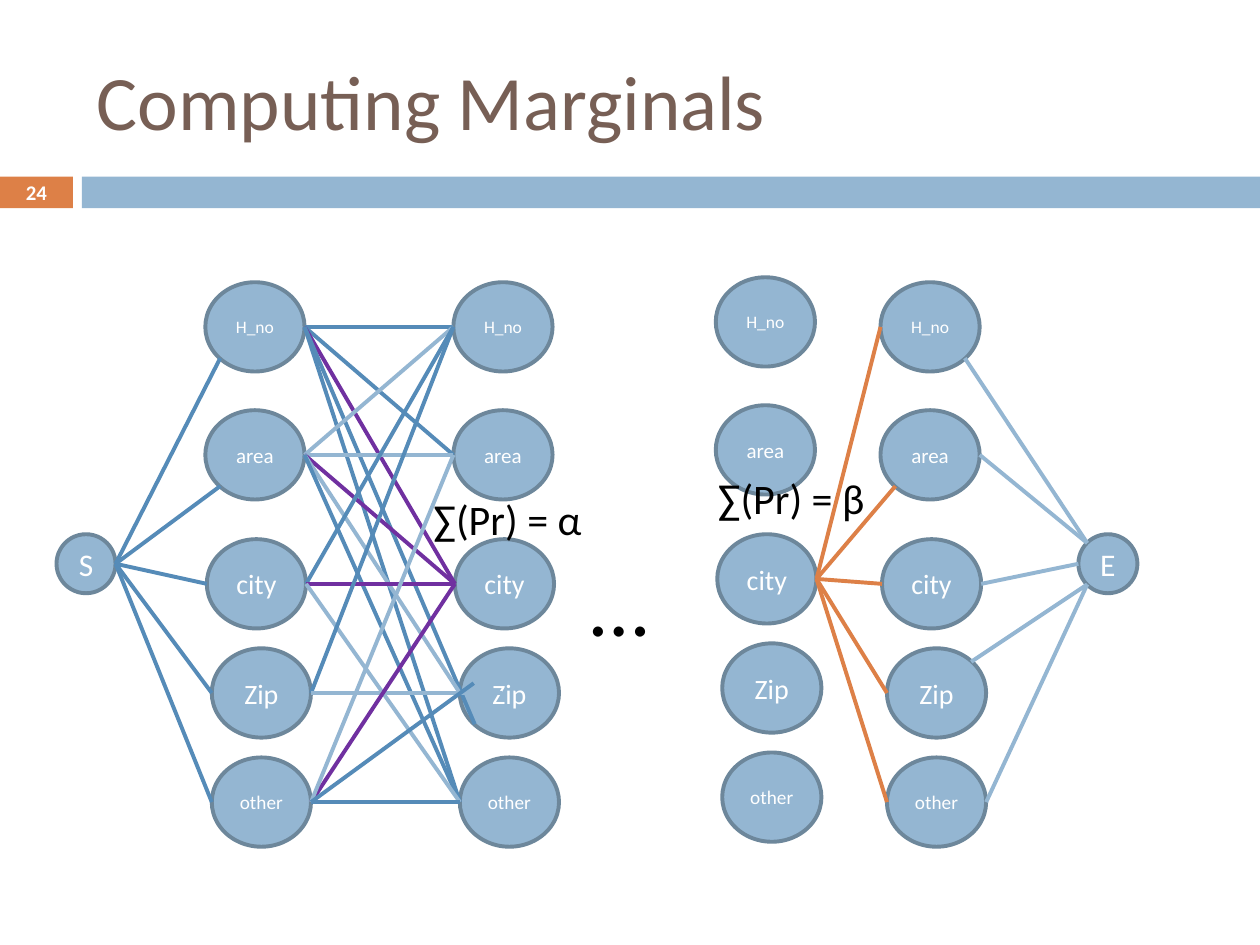
from collections import namedtuple

from lxml import etree
from pptx import Presentation
from pptx.dml.color import RGBColor
from pptx.enum.shapes import MSO_CONNECTOR, MSO_SHAPE
from pptx.enum.text import MSO_ANCHOR, MSO_AUTO_SIZE, PP_ALIGN
from pptx.oxml.ns import qn
from pptx.util import Cm, Pt

OVAL, RECTANGLE = MSO_SHAPE.OVAL, MSO_SHAPE.RECTANGLE
STRAIGHT = MSO_CONNECTOR.STRAIGHT
LEFT, CENTER = PP_ALIGN.LEFT, PP_ALIGN.CENTER
TOP, MIDDLE = MSO_ANCHOR.TOP, MSO_ANCHOR.MIDDLE
NO_AUTOFIT = MSO_AUTO_SIZE.NONE

BROWN = RGBColor(0x77, 0x5F, 0x55)
ORANGE = RGBColor(0xDD, 0x80, 0x47)
LIGHT_BLUE = RGBColor(0x94, 0xB6, 0xD2)
BLUE = RGBColor(0x55, 0x8B, 0xB8)
SLATE = RGBColor(0x6D, 0x87, 0x9B)
PURPLE = RGBColor(0x70, 0x30, 0xA0)
WHITE = RGBColor(0xFF, 0xFF, 0xFF)
BLACK = RGBColor(0, 0, 0)

FONT = "Calibri"
LINE_WIDTH = Pt(2.25)

# All lengths are in centimetres.
Box = namedtuple("Box", "left top width height")
State = namedtuple("State", "label size dx dy")

STATES = [
    State("H_no", 10, 0, 0),
    State("area", 12, 0, 2.58),
    State("city", 16, 0.03, 5.18),
    State("Zip", 16, 0.13, 7.38),
    State("other", 11, 0.13, 9.58),
]
STATE_WIDTH, STATE_HEIGHT = 2.0, 1.8
TERMINAL_SIZE = 1.19

# Where an edge meets a node, as fractions of the node's width and height.
ANCHORS = {
    "left": (0, 0.5),
    "right": (1, 0.5),
    "top left": (0.15, 0.15),
    "top right": (0.85, 0.15),
    "bottom left": (0.15, 0.85),
    "bottom right": (0.85, 0.85),
    "inside": (0.42, 0.5),
    "upper inside": (0.14, 0.39),
}

START_EDGES = [
    ("H_no", "bottom left"), ("area", "bottom left"),
    ("city", "left"), ("Zip", "left"), ("other", "left"),
]
TRANSITIONS = [
    ("H_no", "H_no", "left", BLUE),
    ("H_no", "area", "left", BLUE),
    ("H_no", "city", "left", PURPLE),
    ("H_no", "Zip", "bottom left", BLUE),
    ("H_no", "other", "left", BLUE),
    ("area", "H_no", "left", LIGHT_BLUE),
    ("area", "area", "left", LIGHT_BLUE),
    ("area", "city", "left", PURPLE),
    ("area", "Zip", "left", LIGHT_BLUE),
    ("area", "other", "left", BLUE),
    ("city", "H_no", "left", BLUE),
    ("city", "city", "left", PURPLE),
    ("city", "other", "left", LIGHT_BLUE),
    ("Zip", "H_no", "left", BLUE),
    ("Zip", "Zip", "inside", LIGHT_BLUE),
    ("other", "city", "left", PURPLE),
    ("other", "other", "left", BLUE),
    ("other", "area", "left", LIGHT_BLUE),
    ("other", "Zip", "upper inside", BLUE),
]
BACKWARD_EDGES = [
    ("H_no", "left"), ("area", "bottom left"),
    ("city", "left"), ("Zip", "left"), ("other", "left"),
]
END_EDGES = [
    ("H_no", "bottom right", "top left"),
    ("area", "right", "top left"),
    ("city", "right", "left"),
    ("Zip", "top right", "bottom left"),
    ("other", "right", "bottom left"),
]


def to_lengths(box):
    return [Cm(value) for value in box]


def write_text(shape, text, size, color, align=CENTER, anchor=MIDDLE, bold=False):
    frame = shape.text_frame
    frame.text = text
    frame.word_wrap = True
    frame.auto_size = NO_AUTOFIT
    frame.vertical_anchor = anchor
    paragraph = frame.paragraphs[0]
    paragraph.alignment = align
    font = paragraph.runs[0].font
    font.name, font.size, font.bold = FONT, Pt(size), bold
    font.color.rgb = color


def add_label(slide, box, text, size, color=BLACK, anchor=TOP, bold=False):
    label = slide.shapes.add_textbox(*to_lengths(box))
    write_text(label, text, size, color, anchor=anchor, bold=bold)


def add_filled(slide, kind, box, color):
    shape = slide.shapes.add_shape(kind, *to_lengths(box))
    shape.shadow.inherit = False
    shape.fill.solid()
    shape.fill.fore_color.rgb = color
    shape.line.fill.background()
    return shape


def add_node(slide, box, text, size):
    node = add_filled(slide, OVAL, box, LIGHT_BLUE)
    node.line.color.rgb = SLATE
    node.line.width = LINE_WIDTH
    write_text(node, text, size, WHITE)
    node.text_frame.margin_left = node.text_frame.margin_right = 0
    return box


def add_column(slide, left, top):
    """Stack the five states and return their boxes by label."""
    return {
        state.label: add_node(
            slide,
            Box(left + state.dx, top + state.dy, STATE_WIDTH, STATE_HEIGHT),
            state.label, state.size)
        for state in STATES
    }


def add_terminal(slide, left, top, text):
    return add_node(slide, Box(left, top, TERMINAL_SIZE, TERMINAL_SIZE), text, 18)


def anchor_point(box, anchor):
    across, down = ANCHORS[anchor]
    return Cm(box.left + across * box.width), Cm(box.top + down * box.height)


def add_edge(slide, source, source_anchor, target, target_anchor, color):
    edge = slide.shapes.add_connector(
        STRAIGHT, *anchor_point(source, source_anchor),
        *anchor_point(target, target_anchor))
    edge.line.color.rgb = color
    edge.line.width = LINE_WIDTH
    etree.SubElement(edge._element.spPr, qn("a:effectLst"))


def add_header(slide, box, title, number):
    """Place the title above a two-part bar that carries the slide number."""
    bar_top, bar_height, number_width, bar_left = box.top + 2.92, 0.64, 1.47, 1.65
    number_box = Box(box.left, bar_top, number_width, bar_height)
    add_filled(slide, RECTANGLE, number_box, ORANGE)
    add_filled(slide, RECTANGLE, Box(box.left + bar_left, bar_top,
                                     box.width - bar_left, bar_height), LIGHT_BLUE)
    placeholder = slide.shapes.title
    placeholder.left, placeholder.top, placeholder.width, placeholder.height = (
        to_lengths(Box(box.left + 1.7, box.top, 22.66, 2.74)))
    write_text(placeholder, title, 44, BROWN, align=LEFT)
    add_label(slide, number_box, number, 11.9, WHITE, MIDDLE, bold=True)


def add_trellis(slide, box):
    """Draw the states from S to E with the forward and backward sums."""
    left, top = box.left, box.top
    start = add_terminal(slide, left, top + 5.18, "S")
    end = add_terminal(slide, left + box.width - TERMINAL_SIZE, top + 5.18, "E")
    first, second, last = (
        add_column(slide, left + offset, top + 0.1) for offset in (3, 8, 16.61))

    for label, anchor in START_EDGES:
        add_edge(slide, start, "right", first[label], anchor, BLUE)
    for source, target, anchor, color in TRANSITIONS:
        add_edge(slide, first[source], "right", second[target], anchor, color)
    for label, anchor, end_anchor in END_EDGES:
        add_edge(slide, last[label], anchor, end, end_anchor, LIGHT_BLUE)

    before_last = add_column(slide, left + 13.29, top)
    add_label(slide, Box(left + 10.06, top + 5.43, 2.59, 2.31), "…", 48)
    add_label(slide, Box(left + 7.06, top + 4.24, 4.06, 1.27), "∑(Pr) = α", 24)
    for label, anchor in BACKWARD_EDGES:
        add_edge(slide, before_last["city"], "right", last[label], anchor, ORANGE)
    add_label(slide, Box(left + 12.78, top + 3.81, 4.06, 1.27), "∑(Pr) = β", 24)


def main():
    presentation = Presentation()
    presentation.slide_width, presentation.slide_height = Cm(25.4), Cm(19.05)
    slide = presentation.slides.add_slide(presentation.slide_layouts[5])
    add_header(slide, Box(0, 0.64, 25.4, 3.56), "Computing Marginals", "24")
    add_trellis(slide, Box(1.14, 5.59, 21.79, 11.48))
    presentation.save("out.pptx")


if __name__ == "__main__":
    main()
